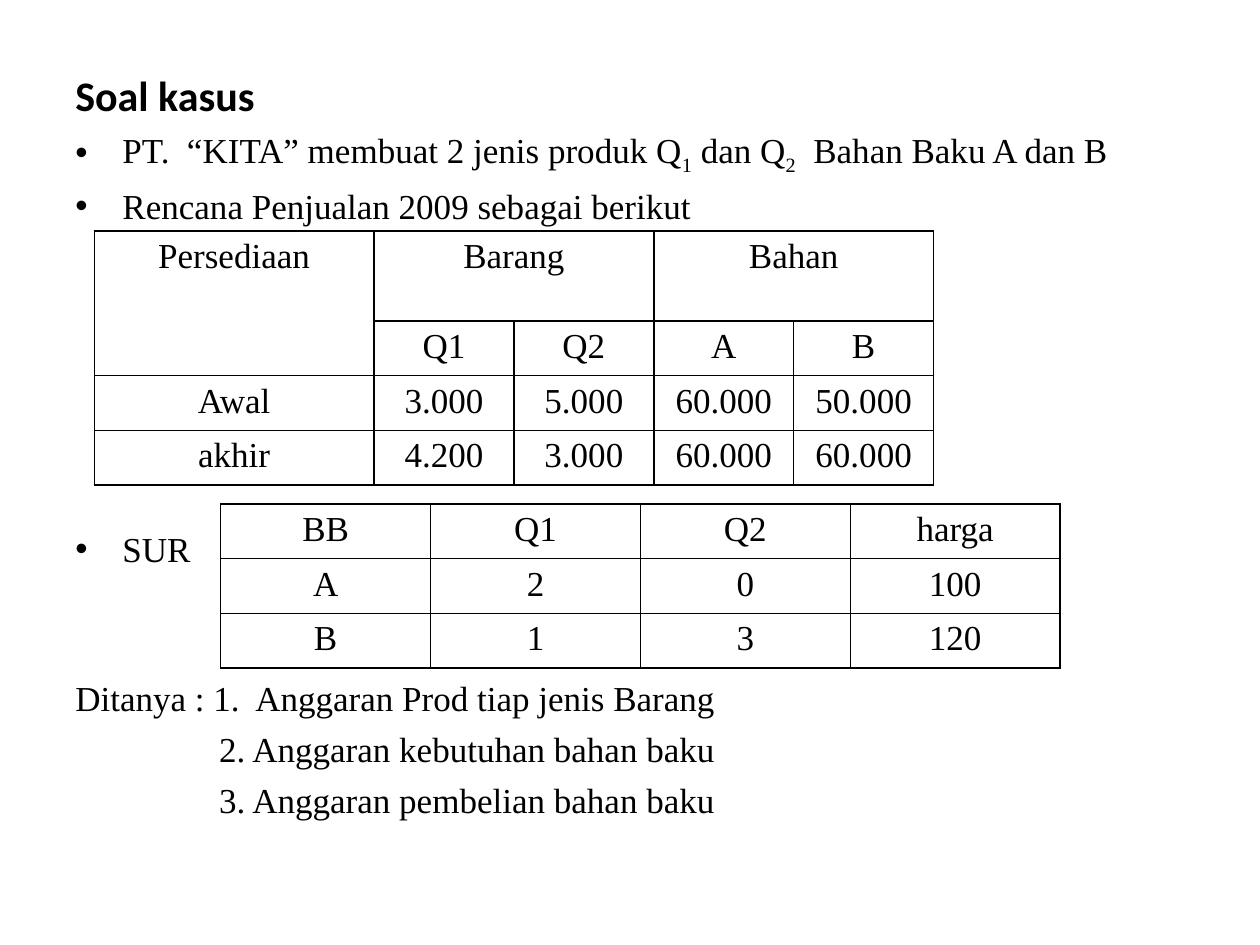
from dataclasses import dataclass

from lxml.etree import SubElement
from pptx import Presentation
from pptx.dml.color import RGBColor
from pptx.enum.text import PP_ALIGN
from pptx.oxml.ns import qn
from pptx.util import Cm, Pt


@dataclass(frozen=True)
class Theme:
    ink: str = "000000"
    heading_font: str = "Calibri"
    body_font: str = "Times New Roman"
    bullet_font: str = "Arial"
    heading_size: int = 24
    body_size: int = 20
    paragraph_gap: int = 5
    border_width: int = 1


THEME = Theme()
HANGING = 0.95
QUESTION_INDENT = 2.9
ROW_HEIGHT = 1.04

STOCK_ROWS = [
    ["Persediaan", "Barang", "", "Bahan", ""],
    ["", "Q1", "Q2", "A", "B"],
    ["Awal", "3.000", "5.000", "60.000", "50.000"],
    ["akhir", "4.200", "3.000", "60.000", "60.000"],
]
STOCK_MERGES = [((0, 0), (1, 0)), ((0, 1), (0, 2)), ((0, 3), (0, 4))]
USAGE_ROWS = [
    ["BB", "Q1", "Q2", "harga"],
    ["A", "2", "0", "100"],
    ["B", "1", "3", "120"],
]


def format_span(span, name=THEME.body_font, size=THEME.body_size, bold=False):
    span.font.name = name
    span.font.size = Pt(size)
    span.font.bold = bold
    span.font.color.rgb = RGBColor.from_string(THEME.ink)


def add_line(frame, text, gap=THEME.paragraph_gap, indent=0):
    """Append a paragraph of body text; gap is the space before it in points."""
    para = frame.add_paragraph()
    para.text = text
    para.space_before = Pt(gap)
    para._p.get_or_add_pPr().set("marL", str(Cm(indent)))
    for span in para.runs:
        format_span(span)
    return para


def add_bullet(frame, text, gap=THEME.paragraph_gap):
    para = add_line(frame, text, gap, HANGING)
    properties = para._p.get_or_add_pPr()
    properties.set("indent", str(-Cm(HANGING)))
    SubElement(properties, qn("a:buFont"), typeface=THEME.bullet_font)
    SubElement(properties, qn("a:buChar"), char="•")
    return para


def append_span(para, text, subscript=False):
    span = para.add_run()
    span.text = text
    format_span(span)
    if subscript:
        span._r.get_or_add_rPr().set("baseline", "-25000")


def add_case_text(page):
    box = page.shapes.add_textbox(Cm(1.27), Cm(1.27), Cm(22.86), Cm(15.75))
    frame = box.text_frame
    frame.word_wrap = True
    frame.text = "Soal kasus"
    format_span(frame.paragraphs[0].runs[0], THEME.heading_font, THEME.heading_size, True)

    products = add_bullet(frame, "PT.  “KITA” membuat 2 jenis produk Q")
    append_span(products, "1", subscript=True)
    append_span(products, " dan Q")
    append_span(products, "2", subscript=True)
    append_span(products, "  Bahan Baku A dan B")
    add_bullet(frame, "Rencana Penjualan 2009 sebagai berikut")
    add_bullet(frame, "SUR", gap=172)

    add_line(frame, "Ditanya : 1.  Anggaran Prod tiap jenis Barang", gap=61)
    for question in ("2. Anggaran kebutuhan bahan baku", "3. Anggaran pembelian bahan baku"):
        add_line(frame, question, indent=QUESTION_INDENT)


def draw_borders(cell):
    properties = cell._tc.get_or_add_tcPr()
    for side in ("lnL", "lnR", "lnT", "lnB"):
        line = SubElement(properties, qn(f"a:{side}"), w=str(Pt(THEME.border_width)))
        fill = SubElement(line, qn("a:solidFill"))
        SubElement(fill, qn("a:srgbClr"), val=THEME.ink)


def add_grid(page, left, top, rows, widths, heights, merges=()):
    """Add a bordered, unfilled table; lengths are centimetres."""
    frame = page.shapes.add_table(
        len(rows), len(widths), Cm(left), Cm(top), Cm(sum(widths)), Cm(sum(heights))
    )
    table = frame.table
    table.first_row = False
    table.horz_banding = False
    for column, width in zip(table.columns, widths):
        column.width = Cm(width)
    for row, height, texts in zip(table.rows, heights, rows):
        row.height = Cm(height)
        for cell, text in zip(row.cells, texts):
            draw_borders(cell)
            cell.fill.background()
            if text:
                cell.text = text
                para = cell.text_frame.paragraphs[0]
                para.alignment = PP_ALIGN.CENTER
                format_span(para.runs[0])
    for first, last in merges:
        table.cell(*first).merge(table.cell(*last))


def main():
    deck = Presentation()
    deck.slide_width, deck.slide_height = Cm(25.4), Cm(19.05)
    page = deck.slides.add_slide(deck.slide_layouts[6])
    add_case_text(page)
    add_grid(page, 1.9, 4.66, STOCK_ROWS, [5.64] + [2.82] * 4,
             [1.81] + [ROW_HEIGHT] * 3, STOCK_MERGES)
    add_grid(page, 4.45, 10.16, USAGE_ROWS, [4.23] * 4, [ROW_HEIGHT] * 3)
    deck.save("out.pptx")


if __name__ == "__main__":
    main()
